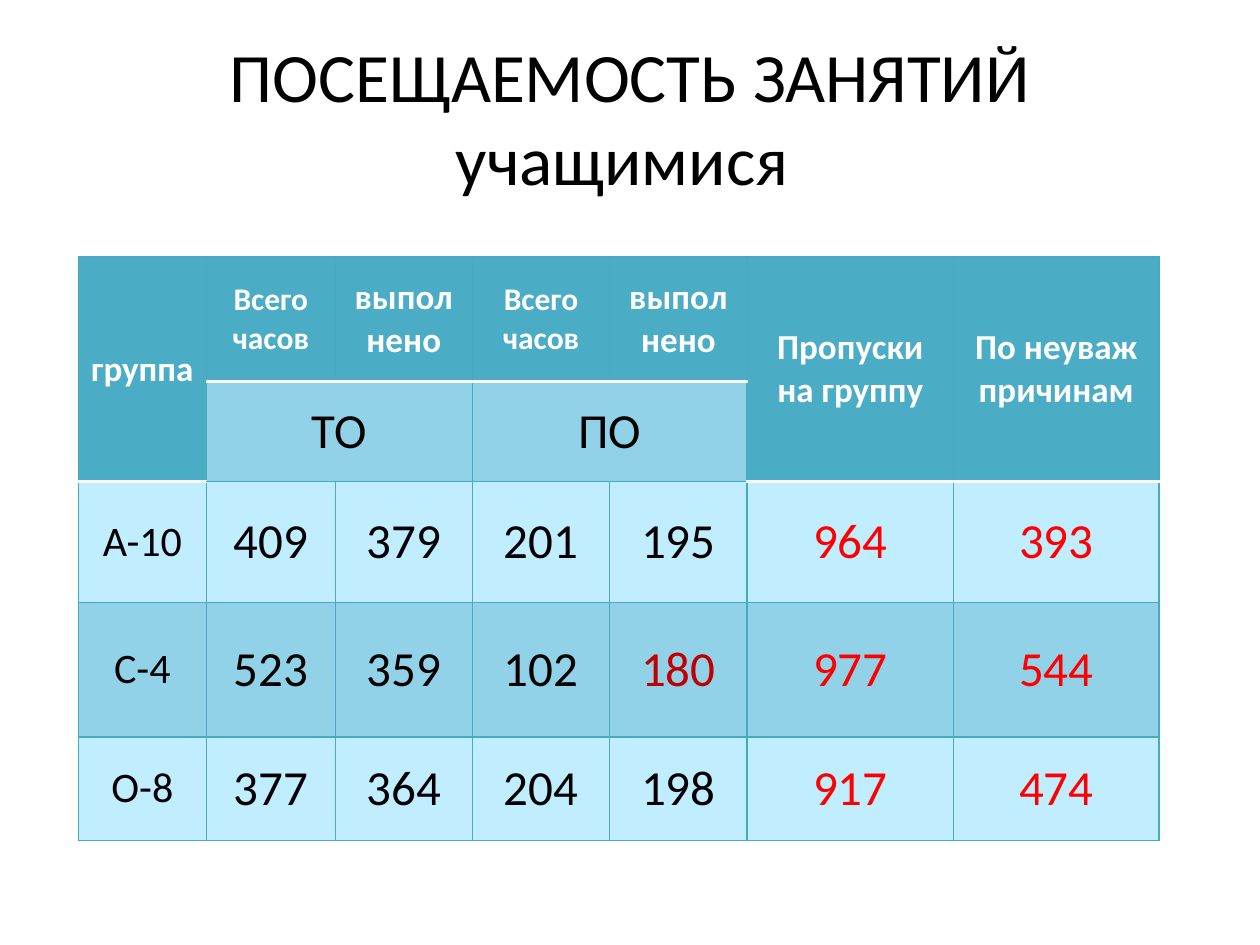
from lxml.etree import SubElement
from pptx import Presentation
from pptx.dml.color import RGBColor
from pptx.enum.text import MSO_ANCHOR as Anchor, PP_ALIGN as Align
from pptx.oxml.ns import qn
from pptx.util import Inches, Pt

BLACK = RGBColor(0x00, 0x00, 0x00)
WHITE = RGBColor(0xFF, 0xFF, 0xFF)
RED = RGBColor(0xFF, 0x00, 0x00)
DARK_RED = RGBColor(0xC0, 0x00, 0x00)
TEAL = RGBColor(0x4B, 0xAC, 0xC6)
BORDER = RGBColor(0x46, 0xAA, 0xC5)
BAND = RGBColor(0x91, 0xD2, 0xE8)
PALE = RGBColor(0xC0, 0xED, 0xFF)

COLUMN_WIDTHS = [1.02, 1.02, 1.09, 1.09, 1.09, 1.64, 1.63]
ROW_HEIGHTS = [0.99, 0.79, 0.96, 1.07, 0.82]
MERGES = [((0, 0), (1, 0)), ((0, 5), (1, 5)), ((0, 6), (1, 6)),
          ((1, 1), (1, 2)), ((1, 3), (1, 4))]
ROWS = [
    ["группа", "Всего часов", "выполнено", "Всего часов", "выполнено",
     "Пропуски на группу", "По неуваж причинам"],
    ["", "ТО", "", "ПО", "", "", ""],
    ["А-10", "409", "379", "201", "195", "964", "393"],
    ["С-4", "523", "359", "102", "180", "977", "544"],
    ["О-8", "377", "364", "204", "198", "917", "474"],
]


def is_header(row, column):
    """The header is one row deep over the hours and two rows deep elsewhere."""
    return row == 0 or (row == 1 and not 1 <= column <= 4)


def cell_look(row, column):
    """Return the fill colour and the font format of a cell."""
    if is_header(row, column):
        size = 18 if column in (1, 3) else 20
        return TEAL, {"size": Pt(size), "bold": True, "color": WHITE}
    color = RED if column >= 5 else BLACK
    if (row, column) == (3, 4):
        color = DARK_RED
    fill = BAND if row in (1, 3) else PALE
    size = 24 if column == 0 else 28
    return fill, {"size": Pt(size), "bold": False, "color": color}


class SlideBuilder:
    font_name = "Calibri"

    def __init__(self, deck):
        self.page = deck.slides.add_slide(deck.slide_layouts[6])

    def add_text(self, frame, text, font_format):
        para = frame.paragraphs[0]
        para.alignment = Align.CENTER
        span = para.add_run()
        span.text = text
        for name, value in {"name": self.font_name, **font_format}.items():
            if name == "color":
                span.font.color.rgb = value
            else:
                setattr(span.font, name, value)

    def title(self, text, left, top, width, height):
        box = self.page.shapes.add_textbox(
            Inches(left), Inches(top), Inches(width), Inches(height))
        frame = box.text_frame
        frame.word_wrap = True
        frame.vertical_anchor = Anchor.MIDDLE
        self.add_text(frame, text, {"size": Pt(39.6), "color": BLACK})

    def borders(self, cell, row, column):
        seams = {"lnL": False, "lnR": False,
                 "lnT": row > 0 and is_header(row - 1, column),
                 "lnB": is_header(row, column)}
        properties = cell._tc.get_or_add_tcPr()
        for position, (tag, is_seam) in enumerate(seams.items()):
            color, width = (WHITE, 2) if is_seam else (BORDER, 0.75)
            line = SubElement(properties, qn(f"a:{tag}"), w=str(Pt(width)))
            fill = SubElement(line, qn("a:solidFill"))
            SubElement(fill, qn("a:srgbClr"), val=str(color))
            properties.insert(position, line)

    def table(self, rows, left, top):
        frame = self.page.shapes.add_table(
            len(rows), len(COLUMN_WIDTHS), Inches(left), Inches(top),
            Inches(sum(COLUMN_WIDTHS)), Inches(sum(ROW_HEIGHTS)))
        grid = frame.table
        for column, width in zip(grid.columns, COLUMN_WIDTHS):
            column.width = Inches(width)
        for row, height in zip(grid.rows, ROW_HEIGHTS):
            row.height = Inches(height)
        for first, last in MERGES:
            grid.cell(*first).merge(grid.cell(*last))
        for row, texts in enumerate(rows):
            for column, text in enumerate(texts):
                cell = grid.cell(row, column)
                fill, font_format = cell_look(row, column)
                cell.fill.solid()
                cell.fill.fore_color.rgb = fill
                cell.vertical_anchor = Anchor.MIDDLE
                self.borders(cell, row, column)
                if text:
                    self.add_text(cell.text_frame, text, font_format)


def main():
    deck = Presentation()
    deck.slide_width, deck.slide_height = Inches(10), Inches(7.5)
    builder = SlideBuilder(deck)
    builder.title("ПОСЕЩАЕМОСТЬ ЗАНЯТИЙ учащимися ", 0.5, 0.3, 9, 1.25)
    builder.table(ROWS, 0.62, 2.04)
    deck.save("out.pptx")


if __name__ == "__main__":
    main()
